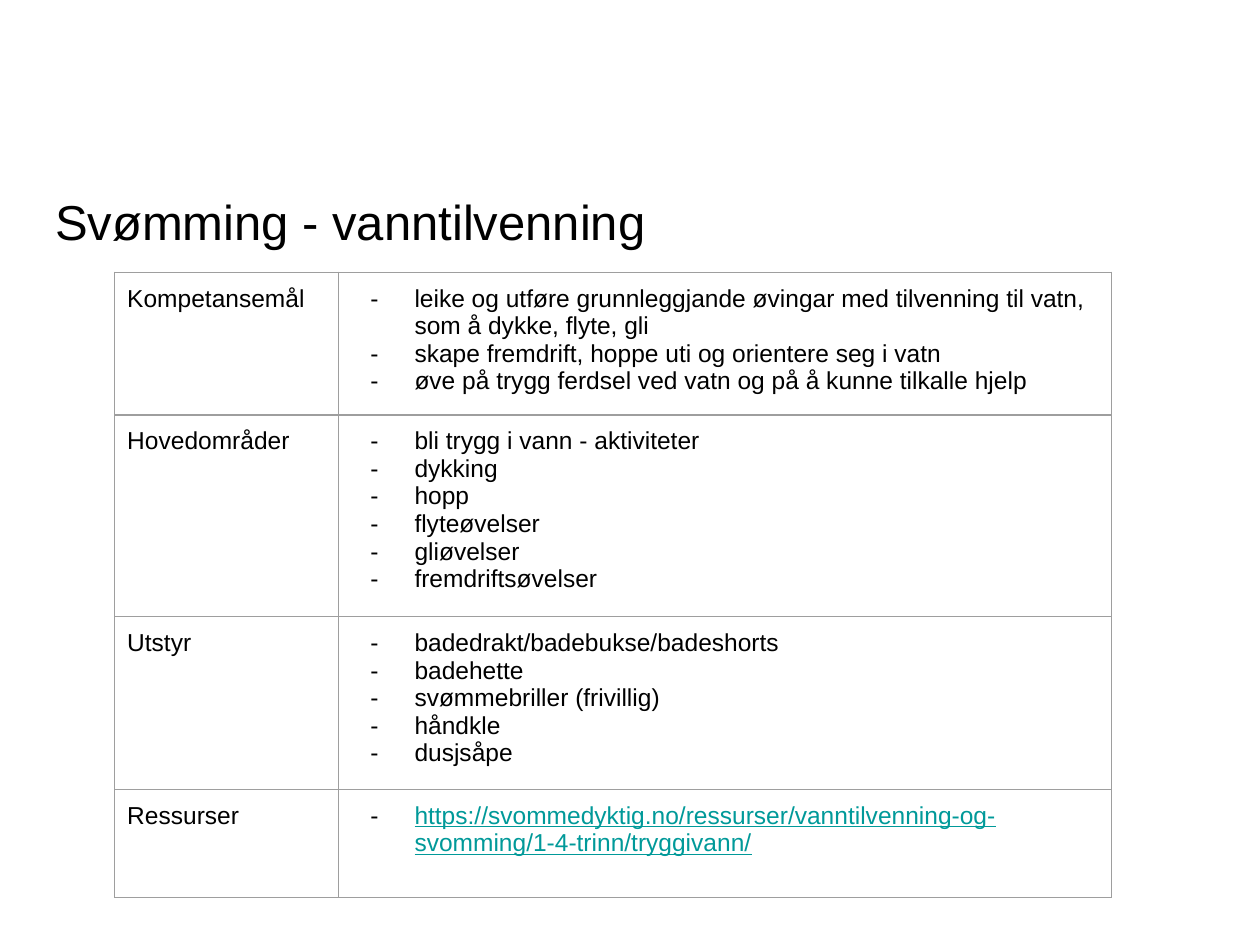
from lxml import etree
from pptx import Presentation
from pptx.dml.color import RGBColor
from pptx.enum import text
from pptx.oxml import ns
from pptx.util import Inches, Pt

TITLE = "Svømming - vanntilvenning"
# label, row height in inches, bullet items
ROWS = [
    ("Kompetansemål", 1.07, [
        "leike og utføre grunnleggjande øvingar med tilvenning til vatn, som å dykke, flyte, gli",
        "skape fremdrift, hoppe uti og orientere seg i vatn",
        "øve på trygg ferdsel ved vatn og på å kunne tilkalle hjelp",
    ]),
    ("Hovedområder", 1.51, [
        "bli trygg i vann - aktiviteter", "dykking", "hopp",
        "flyteøvelser", "gliøvelser", "fremdriftsøvelser",
    ]),
    ("Utstyr", 1.29, [
        "badedrakt/badebukse/badeshorts", "badehette",
        "svømmebriller (frivillig)", "håndkle", "dusjsåpe",
    ]),
    ("Ressurser", 0.86, [
        "https://svommedyktig.no/ressurser/vanntilvenning-og-svomming/1-4-trinn/tryggivann/",
    ]),
]
COL_WIDTHS = [1.78, 6.13]
COLORS = {"text": "000000", "link": "009999", "border": "9E9E9E"}
FONT = "Arial"
MARGIN = Inches(0.1)


def add_run(p, content, size, color="text"):
    r = p.add_run()
    r.text = content
    r.font.name = FONT
    r.font.size = Pt(size)
    r.font.color.rgb = RGBColor.from_string(COLORS[color])
    return r


def set_margins(box):
    box.margin_left = box.margin_right = box.margin_top = box.margin_bottom = MARGIN


def add_dash(p):
    pPr = p._p.get_or_add_pPr()
    pPr.set("marL", str(Inches(0.5)))
    pPr.set("indent", str(-Inches(0.35)))
    color = etree.SubElement(pPr, ns.qn("a:buClr"))
    etree.SubElement(color, ns.qn("a:srgbClr"), val=COLORS["text"])
    etree.SubElement(pPr, ns.qn("a:buFont"), typeface=FONT)
    etree.SubElement(pPr, ns.qn("a:buChar"), char="-")


def set_borders(cell):
    tcPr = cell._tc.get_or_add_tcPr()
    for i, side in enumerate(("lnL", "lnR", "lnT", "lnB")):
        ln = etree.Element(ns.qn(f"a:{side}"), w=str(Pt(0.75)))
        fill = etree.SubElement(ln, ns.qn("a:solidFill"))
        etree.SubElement(fill, ns.qn("a:srgbClr"), val=COLORS["border"])
        tcPr.insert(i, ln)


def fill_cell(cell, items, dashed):
    set_margins(cell)
    cell.fill.background()
    set_borders(cell)
    tf = cell.text_frame
    for i, item in enumerate(items):
        p = tf.add_paragraph() if i else tf.paragraphs[0]
        if dashed:
            add_dash(p)
        is_link = item.startswith("https://")
        r = add_run(p, item, 14, "link" if is_link else "text")
        if is_link:
            r.font.underline = True


prs = Presentation()
prs.slide_width, prs.slide_height = Inches(10), Inches(7.5)
s = prs.slides.add_slide(prs.slide_layouts[6])

title = s.shapes.add_textbox(Inches(0.34), Inches(1.35), Inches(9.32), Inches(0.81))
tf = title.text_frame
tf.word_wrap = True
tf.vertical_anchor = text.MSO_ANCHOR.MIDDLE
set_margins(tf)
add_run(tf.paragraphs[0], TITLE, 28)

table = s.shapes.add_table(
    len(ROWS), len(COL_WIDTHS), Inches(0.91), Inches(2.16),
    Inches(sum(COL_WIDTHS)), Inches(sum(height for _, height, _ in ROWS))).table
table.first_row = table.horz_banding = False
for column, width in zip(table.columns, COL_WIDTHS):
    column.width = Inches(width)
for i, (label, height, items) in enumerate(ROWS):
    table.rows[i].height = Inches(height)
    fill_cell(table.cell(i, 0), [label], dashed=False)
    fill_cell(table.cell(i, 1), items, dashed=True)

prs.save("out.pptx")
